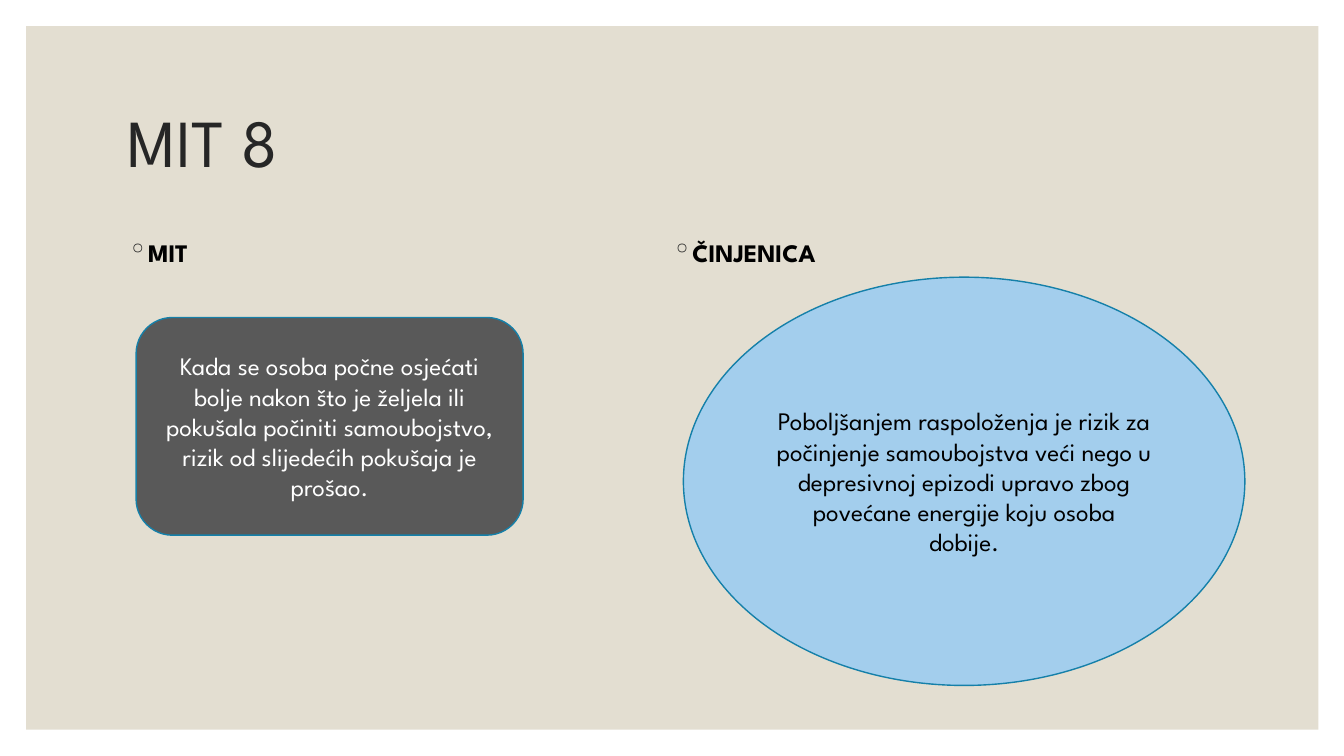
import pptx
import pptx.dml.color
import pptx.enum.shapes
import pptx.enum.text
import pptx.oxml
import pptx.oxml.ns
import pptx.util

COLORS = {
    "panel": "E3DED1",
    "title": "262626",
    "black": "000000",
    "white": "FFFFFF",
    "myth": "595959",
    "fact": "A3CEED",
    "outline": "1580A9",
}
COLUMNS, ROWS = 40, 30
HEADING_PITCH = 16.2
SHAPES = pptx.enum.shapes.MSO_SHAPE


class PageBuilder:
    font_name = "League Spartan"

    def __init__(self, deck):
        self.page = deck.slides.add_slide(deck.slide_layouts[6])
        self.column = deck.slide_width / COLUMNS
        self.row = deck.slide_height / ROWS

    def place(self, left, top, width, height):
        return (int(left * self.column), int(top * self.row),
                int(width * self.column), int(height * self.row))

    def color(self, name):
        return pptx.dml.color.RGBColor.from_string(COLORS[name])

    def fill_text(self, frame, text, color, size=18, bold=False):
        frame.word_wrap = True
        frame.vertical_anchor = pptx.enum.text.MSO_ANCHOR.MIDDLE
        para = frame.paragraphs[0]
        para.text = text
        para.font.name = self.font_name
        para.font.size = pptx.util.Pt(size)
        para.font.bold = bold
        para.font.color.rgb = self.color(color)
        return para

    def shape(self, kind, area, fill, outline=None):
        shape = self.page.shapes.add_shape(kind, *self.place(*area))
        shape.shadow.inherit = False
        shape.fill.solid()
        shape.fill.fore_color.rgb = self.color(fill)
        if outline:
            shape.line.color.rgb = self.color(outline)
            shape.line.width = pptx.util.Pt(1)
        else:
            shape.line.fill.background()
        return shape

    def bubble(self, kind, area, fill, text, color):
        shape = self.shape(kind, area, fill, "outline")
        para = self.fill_text(shape.text_frame, text, color)
        para.alignment = pptx.enum.text.PP_ALIGN.CENTER

    def text(self, area, text, color, **style):
        box = self.page.shapes.add_textbox(*self.place(*area))
        return self.fill_text(box.text_frame, text, color, **style)

    def heading(self, area, text):
        para = self.text(area, text, "black", bold=True)
        indent = pptx.util.Inches(0.2)
        properties = para._p.get_or_add_pPr()
        properties.set("marL", str(indent))
        properties.set("indent", str(-indent))
        namespace = pptx.oxml.ns.nsdecls("a")
        bullet_color = pptx.oxml.parse_xml(
            f'<a:buClr {namespace}><a:srgbClr val="{COLORS["title"]}"/></a:buClr>')
        bullet = pptx.oxml.parse_xml(f'<a:buChar {namespace} char="◦"/>')
        properties.insert(0, bullet_color)
        properties.insert(1, bullet)


def main():
    deck = pptx.Presentation()
    deck.slide_width = pptx.util.Inches(13.33)
    deck.slide_height = pptx.util.Inches(7.5)
    builder = PageBuilder(deck)

    builder.shape(SHAPES.RECTANGLE, (0.78, 1.04, 38.46, 27.92), "panel")
    title = builder.text((3.51, 2.8, 33, 6), "MIT 8", "title", size=48)
    title.line_spacing = 0.9

    for index, heading in enumerate(("MIT", "ČINJENICA")):
        builder.heading((3.51 + index * HEADING_PITCH, 9.2, 15, 1.6), heading)

    builder.bubble(
        SHAPES.ROUNDED_RECTANGLE, (4.05, 12.6, 11.52, 8.64), "myth",
        "Kada se osoba počne osjećati bolje nakon što je željela ili pokušala "
        "počiniti samoubojstvo, rizik od slijedećih pokušaja je prošao.", "white")
    builder.bubble(
        SHAPES.OVAL, (20.34, 11, 16.71, 16.2), "fact",
        "Poboljšanjem raspoloženja je rizik za počinjenje samoubojstva veći nego "
        "u depresivnoj epizodi upravo zbog povećane energije koju osoba dobije.",
        "black")

    deck.save("out.pptx")


if __name__ == "__main__":
    main()
